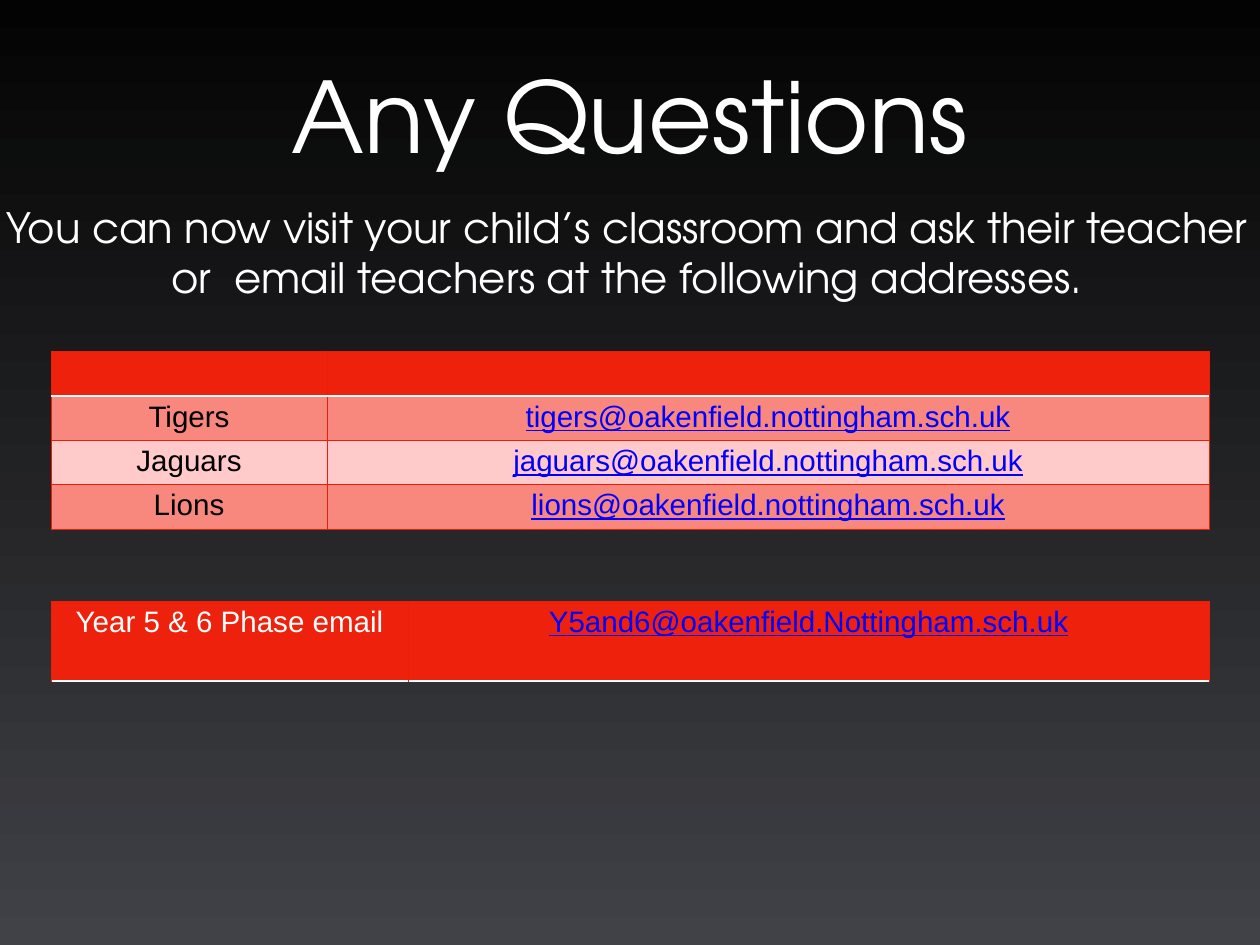
from lxml import etree
from pptx import Presentation
from pptx import util as u
from pptx.dml.color import RGBColor
from pptx.enum import text
from pptx.oxml.ns import qn

# Content: boxes are left, top, width, height in px
PX = 10320
SLIDE = (1260, 945)
DISPLAY, BODY = "TeX Gyre Adventor", "Arial"
WHITE, BLACK, LINK = "FFFFFF", "000000", "0000FF"
RED, RULE, ROSE, BLUSH = "EE220C", "EE1D06", "F8877D", "FFCAC9"
BACKGROUND = ("030303", "414247")
DOMAIN = "@oakenfield.nottingham.sch.uk"

HEADINGS = [
    ("Any Questions", (123, 38, 1014, 140), 80, text.MSO_ANCHOR.BOTTOM),
    ("You can now visit your child’s classroom and ask their teacher or  email "
     "teachers at the following addresses.",
     (0, 196, 1254, 112), 34, text.MSO_ANCHOR.MIDDLE),
]
TABLE_LEFT = 51
# Each row: height, fill, label colour, label, address
CLASSES = [
    (45, RED, WHITE, "", ""),
    (44, ROSE, BLACK, "Tigers", "tigers" + DOMAIN),
    (44, BLUSH, BLACK, "Jaguars", "jaguars" + DOMAIN),
    (45, ROSE, BLACK, "Lions", "lions" + DOMAIN),
]
PHASE = [(80, RED, WHITE, "Year 5 & 6 Phase email",
          "Y5and6@oakenfield.Nottingham.sch.uk")]
TABLES = [(351, (276, 882), CLASSES), (601, (357, 801), PHASE)]


def px(length):
    return u.Emu(length * PX)


def rgb(color):
    return RGBColor.from_string(color)


def style(para, font, size, color):
    para.alignment = text.PP_ALIGN.CENTER
    para.font.name, para.font.size = font, u.Pt(size)
    para.font.color.rgb = rgb(color)


def add_heading(page, words, place, size, anchor):
    frame = page.shapes.add_textbox(*map(px, place)).text_frame
    frame.word_wrap = True
    frame.vertical_anchor = anchor
    frame.margin_left = frame.margin_right = px(5)
    frame.margin_top = frame.margin_bottom = px(5)
    para = frame.paragraphs[0]
    para.text = words
    style(para, DISPLAY, size, WHITE)


def add_border(cell, side, color, points):
    line = etree.SubElement(cell._tc.get_or_add_tcPr(), qn("a:ln" + side),
                            w=str(u.Pt(points)))
    solid = etree.SubElement(line, qn("a:solidFill"))
    etree.SubElement(solid, qn("a:srgbClr"), val=color)


def add_addresses(page, top, widths, rows):
    heights = [row[0] for row in rows]
    table = page.shapes.add_table(
        len(rows), len(widths), px(TABLE_LEFT), px(top),
        px(sum(widths)), px(sum(heights))).table
    table.first_row = table.horz_banding = False
    for column, width in zip(table.columns, widths):
        column.width = px(width)
    for i, (height, fill, color, *words) in enumerate(rows):
        table.rows[i].height = px(height)
        for j, word in enumerate(words):
            cell = table.cell(i, j)
            # White rule below the red row, thin red rules elsewhere
            white_sides = {"T": i == 1, "B": i == 0}
            for side in "LRTB":
                white = white_sides.get(side, False)
                add_border(cell, side, *((WHITE, 2) if white else (RULE, 0.75)))
            cell.fill.solid()
            cell.fill.fore_color.rgb = rgb(fill)
            para = cell.text_frame.paragraphs[0]
            para.text = word
            is_link = j == 1
            style(para, BODY, 24, LINK if is_link else color)
            para.font.underline = is_link


def main():
    deck = Presentation()
    deck.slide_width, deck.slide_height = map(px, SLIDE)
    page = deck.slides.add_slide(deck.slide_layouts[6])

    # Background, dark at the top
    backdrop = page.background.fill
    backdrop.gradient()
    backdrop.gradient_angle = 270
    for stop, color, position in zip(backdrop.gradient_stops, BACKGROUND, (0, 1)):
        stop.color.rgb = rgb(color)
        stop.position = position

    # Headings and address tables
    for heading in HEADINGS:
        add_heading(page, *heading)
    for addresses in TABLES:
        add_addresses(page, *addresses)
    deck.save("out.pptx")


if __name__ == "__main__":
    main()
